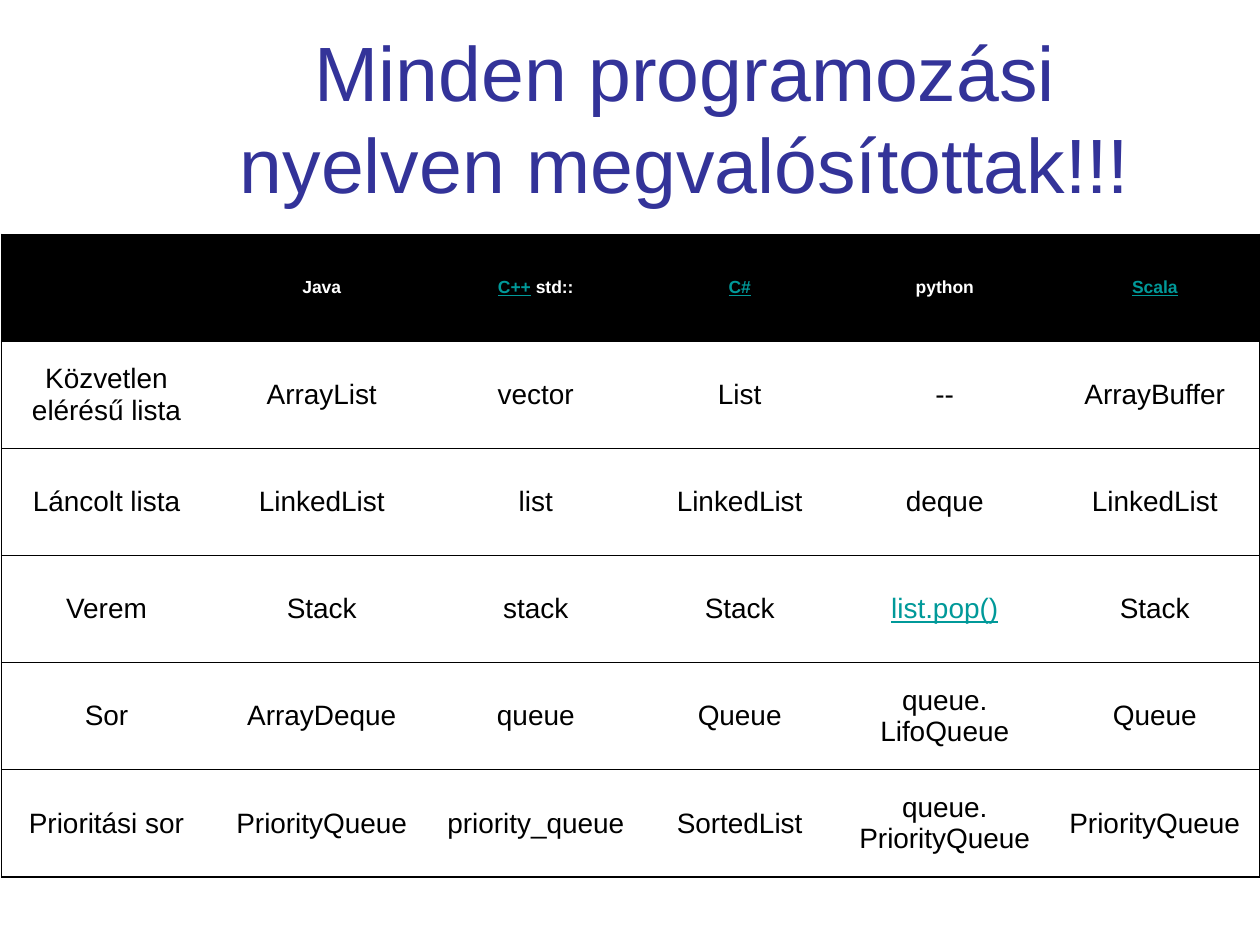
import pptx
import pptx.dml.color
import pptx.enum.text
import pptx.oxml
import pptx.oxml.ns
import pptx.util
from pptx.util import Cm

FONT = "Arial"
BLACK, WHITE, TITLE_BLUE, LINK_TEAL = "000000", "FFFFFF", "333399", "009999"

# "|" separates differently formatted runs, "\n" separates paragraphs
STRUCTURES = [
    ["", "Java", "C++| std::", "C#", "python", "Scala"],
    ["Közvetlen elérésű lista", "ArrayList", "vector", "List", "--", "ArrayBuffer"],
    ["Láncolt lista", "LinkedList", "list", "LinkedList", "deque", "LinkedList"],
    ["Verem", "Stack", "stack", "Stack", "list.pop()", "Stack"],
    ["Sor", "ArrayDeque", "queue", "Queue", "queue.\nLifoQueue", "Queue"],
    ["Prioritási sor", "PriorityQueue", "priority_queue", "SortedList",
     "queue.\nPriorityQueue", "PriorityQueue"],
]
LINK_LOOK = {"C++", "C#", "Scala", "list.pop()"}
COLUMN_WIDTHS = [4.24, 4.45, 4.19, 4.04, 4.24, 4.24]


def rgb(color):
    return pptx.dml.color.RGBColor.from_string(color)


def style_run(run, size, color, bold=False, underline=False):
    run.font.name = FONT
    run.font.size = pptx.util.Pt(size)
    run.font.bold = bold
    run.font.underline = underline
    run.font.color.rgb = rgb(color)


def set_border(cell, side, visible):
    line = (f'<a:solidFill><a:srgbClr val="{BLACK}"/></a:solidFill>'
            if visible else "<a:noFill/>")
    width = pptx.util.Pt(0.75)
    cell._tc.get_or_add_tcPr().append(pptx.oxml.parse_xml(
        f'<a:ln{side} {pptx.oxml.ns.nsdecls("a")} w="{width}">{line}</a:ln{side}>'))


def fill_cell(cell, text, is_header):
    cell.vertical_anchor = pptx.enum.text.MSO_ANCHOR.MIDDLE
    cell.fill.solid()
    cell.fill.fore_color.rgb = rgb(BLACK if is_header else WHITE)
    cell.text_frame.text = text.replace("|", "\n") if "\n" in text else text.split("|")[0]
    for extra in text.split("|")[1:]:
        cell.text_frame.paragraphs[0].add_run().text = extra
    for paragraph in cell.text_frame.paragraphs:
        paragraph.alignment = pptx.enum.text.PP_ALIGN.CENTER
        for run in paragraph.runs:
            linked = run.text in LINK_LOOK
            plain = WHITE if is_header else BLACK
            style_run(run, 10 if is_header else 16, LINK_LOOK and LINK_TEAL if linked else plain,
                      bold=is_header, underline=linked)


def add_title(slide, left, top, width, height):
    frame = slide.shapes.add_textbox(left, top, width, height).text_frame
    frame.word_wrap = True
    frame.vertical_anchor = pptx.enum.text.MSO_ANCHOR.MIDDLE
    frame.text = "Minden programozási nyelven megvalósítottak!!!"
    frame.paragraphs[0].alignment = pptx.enum.text.PP_ALIGN.CENTER
    style_run(frame.paragraphs[0].runs[0], 44, TITLE_BLUE)


def add_structure_table(slide, left, top, width, height):
    row_count, column_count = len(STRUCTURES), len(COLUMN_WIDTHS)
    table = slide.shapes.add_table(row_count, column_count, left, top, width, height).table
    table.first_row = table.horz_banding = False
    for column, share in zip(table.columns, COLUMN_WIDTHS):
        column.width = int(width * share / sum(COLUMN_WIDTHS))

    # Horizontal rules everywhere, vertical ones only on the outside
    for r, texts in enumerate(STRUCTURES):
        for c, text in enumerate(texts):
            cell = table.cell(r, c)
            set_border(cell, "L", c == 0)
            set_border(cell, "R", c == column_count - 1)
            set_border(cell, "T", True)
            set_border(cell, "B", True)
            fill_cell(cell, text, is_header=r == 0)


def main():
    deck = pptx.Presentation()
    deck.slide_width, deck.slide_height = Cm(25.4), Cm(19.05)
    slide = deck.slides.add_slide(deck.slide_layouts[6])
    add_title(slide, Cm(3.5), Cm(0.76), Cm(20.63), Cm(3.18))
    add_structure_table(slide, Cm(0.03), Cm(4.72), Cm(25.37), Cm(12.96))
    deck.save("out.pptx")


if __name__ == "__main__":
    main()
